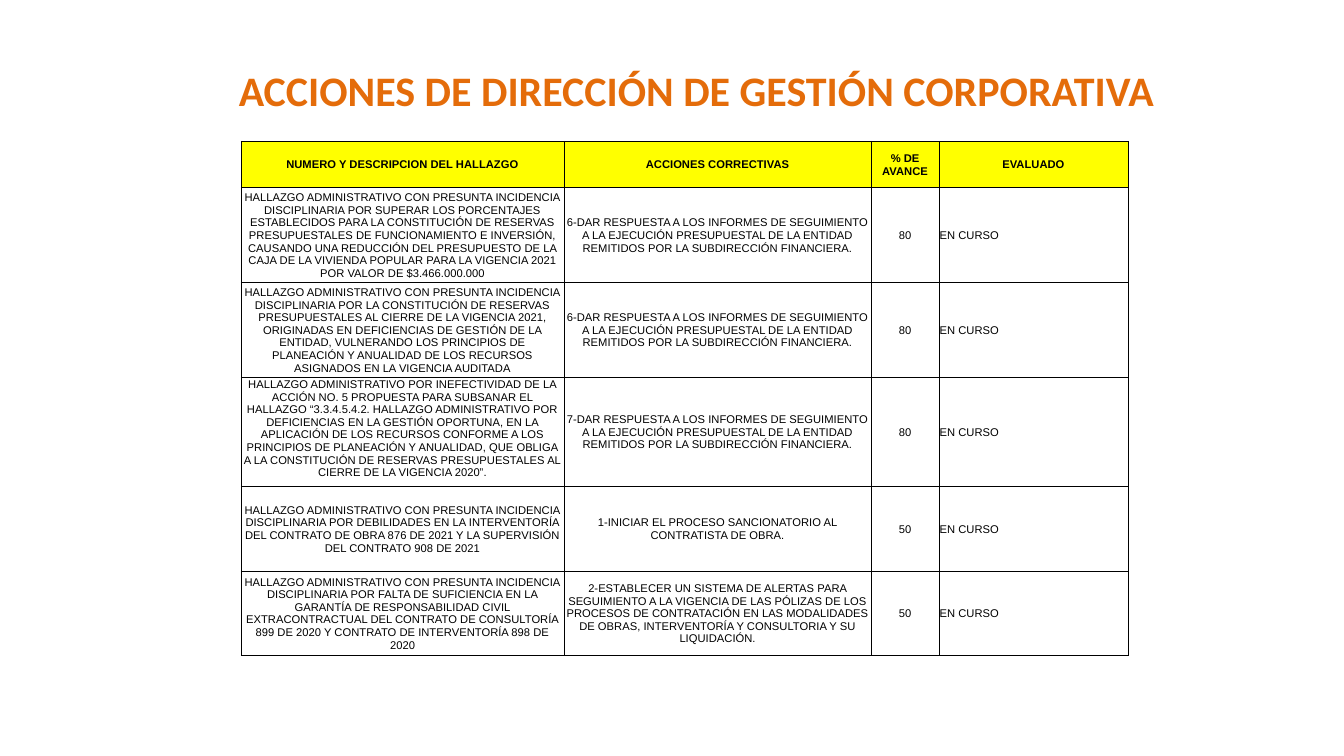
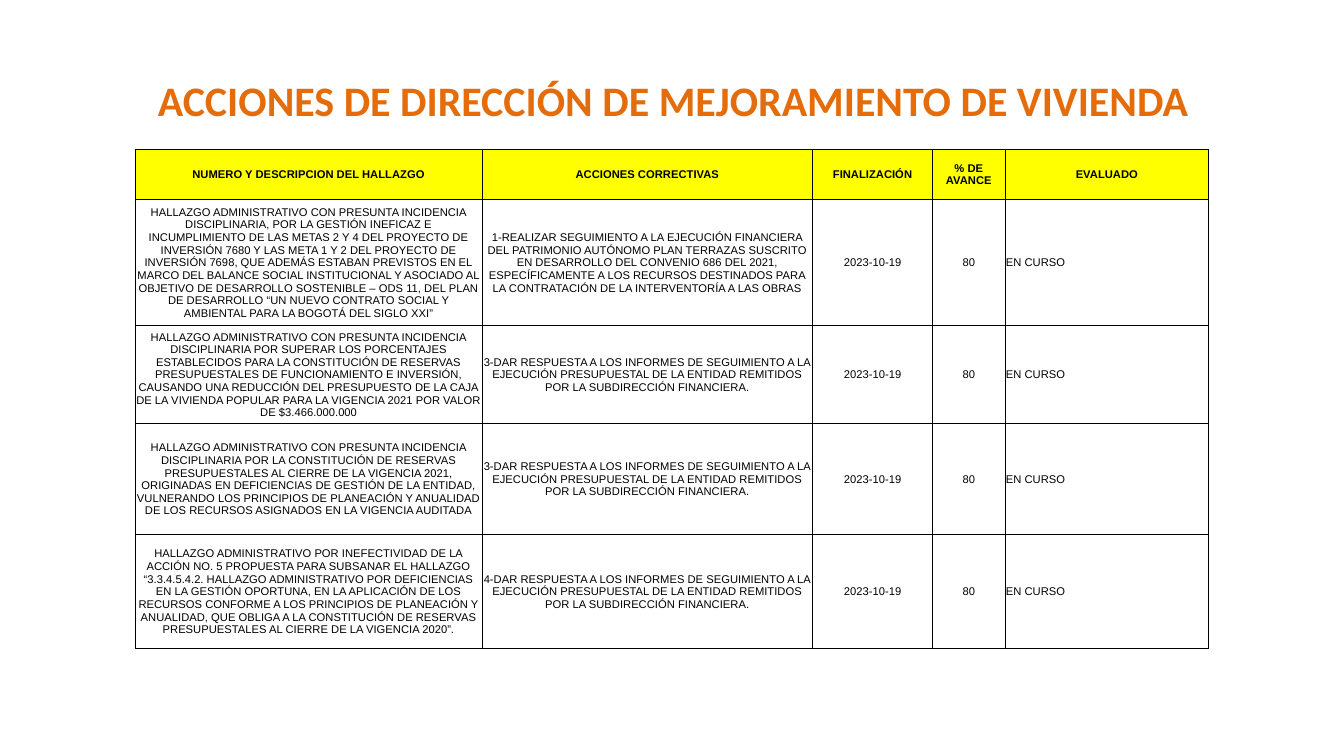
"""Build two slides that track corrective actions for audit findings."""
import pptx
import pptx.dml.color
import pptx.enum.text
import pptx.oxml
import pptx.oxml.ns
import pptx.util

Cm = pptx.util.Cm
Pt = pptx.util.Pt
RGBColor = pptx.dml.color.RGBColor
CENTER = pptx.enum.text.PP_ALIGN.CENTER
LEFT = pptx.enum.text.PP_ALIGN.LEFT
MIDDLE = pptx.enum.text.MSO_ANCHOR.MIDDLE
TOP = pptx.enum.text.MSO_ANCHOR.TOP

ORANGE = RGBColor(0xE4, 0x6C, 0x0A)
YELLOW = RGBColor(0xFF, 0xFF, 0x00)
BLACK = RGBColor(0x00, 0x00, 0x00)

FINDING = "NUMERO Y DESCRIPCION DEL HALLAZGO"
ACTIONS = "ACCIONES CORRECTIVAS"
PROGRESS = "% DE AVANCE"
STATUS = "EVALUADO"
IN_PROGRESS = "EN CURSO"
END_DATE = "2023-10-19"

PRESUMED = "HALLAZGO ADMINISTRATIVO CON PRESUNTA INCIDENCIA DISCIPLINARIA"
EXCESS_RESERVES = (
    f"{PRESUMED} POR SUPERAR LOS PORCENTAJES ESTABLECIDOS PARA LA CONSTITUCIÓN DE "
    "RESERVAS PRESUPUESTALES DE FUNCIONAMIENTO E INVERSIÓN, CAUSANDO UNA REDUCCIÓN DEL "
    "PRESUPUESTO DE LA CAJA DE LA VIVIENDA POPULAR PARA LA VIGENCIA 2021 POR VALOR DE "
    "$3.466.000.000")
YEAR_END_RESERVES = (
    f"{PRESUMED} POR LA CONSTITUCIÓN DE RESERVAS PRESUPUESTALES AL CIERRE DE LA VIGENCIA "
    "2021, ORIGINADAS EN DEFICIENCIAS DE GESTIÓN DE LA ENTIDAD, VULNERANDO LOS PRINCIPIOS "
    "DE PLANEACIÓN Y ANUALIDAD DE LOS RECURSOS ASIGNADOS EN LA VIGENCIA AUDITADA")
INEFFECTIVE_ACTION = (
    "HALLAZGO ADMINISTRATIVO POR INEFECTIVIDAD DE LA ACCIÓN NO. 5 PROPUESTA PARA SUBSANAR "
    "EL HALLAZGO “3.3.4.5.4.2. HALLAZGO ADMINISTRATIVO POR DEFICIENCIAS EN LA GESTIÓN "
    "OPORTUNA, EN LA APLICACIÓN DE LOS RECURSOS CONFORME A LOS PRINCIPIOS DE PLANEACIÓN Y "
    "ANUALIDAD, QUE OBLIGA A LA CONSTITUCIÓN DE RESERVAS PRESUPUESTALES AL CIERRE DE LA "
    "VIGENCIA 2020”.")
SUPERVISION = (
    f"{PRESUMED} POR DEBILIDADES EN LA INTERVENTORÍA DEL CONTRATO DE OBRA 876 DE 2021 Y LA "
    "SUPERVISIÓN DEL CONTRATO 908 DE 2021")
LIABILITY = (
    f"{PRESUMED} POR FALTA DE SUFICIENCIA EN LA GARANTÍA DE RESPONSABILIDAD CIVIL "
    "EXTRACONTRACTUAL DEL CONTRATO DE CONSULTORÍA 899 DE 2020 Y CONTRATO DE INTERVENTORÍA "
    "898 DE 2020")
MISSED_TARGETS = (
    f"{PRESUMED}, POR LA GESTIÓN INEFICAZ E INCUMPLIMIENTO DE LAS METAS 2 Y 4 DEL PROYECTO "
    "DE INVERSIÓN 7680 Y LAS META 1 Y 2 DEL PROYECTO DE INVERSIÓN 7698, QUE ADEMÁS ESTABAN "
    "PREVISTOS EN EL MARCO DEL BALANCE SOCIAL INSTITUCIONAL Y ASOCIADO AL OBJETIVO DE "
    "DESARROLLO SOSTENIBLE – ODS 11, DEL PLAN DE DESARROLLO “UN NUEVO CONTRATO SOCIAL Y "
    "AMBIENTAL PARA LA BOGOTÁ DEL SIGLO XXI”")

ANSWER_REPORTS = (
    "DAR RESPUESTA A LOS INFORMES DE SEGUIMIENTO A LA EJECUCIÓN PRESUPUESTAL DE LA ENTIDAD "
    "REMITIDOS POR LA SUBDIRECCIÓN FINANCIERA.")
START_SANCTION = "1-INICIAR EL PROCESO SANCIONATORIO AL CONTRATISTA DE OBRA."
ALERT_SYSTEM = (
    "2-ESTABLECER UN SISTEMA DE ALERTAS PARA SEGUIMIENTO A LA VIGENCIA DE LAS PÓLIZAS DE LOS "
    "PROCESOS DE CONTRATACIÓN EN LAS MODALIDADES DE OBRAS, INTERVENTORÍA Y CONSULTORIA Y SU "
    "LIQUIDACIÓN.")
TRACK_SPENDING = (
    "1-REALIZAR SEGUIMIENTO A LA EJECUCIÓN FINANCIERA DEL PATRIMONIO AUTÓNOMO PLAN TERRAZAS "
    "SUSCRITO EN DESARROLLO DEL CONVENIO 686 DEL 2021, ESPECÍFICAMENTE A LOS RECURSOS "
    "DESTINADOS PARA LA CONTRATACIÓN DE LA INTERVENTORÍA A LAS OBRAS")

SLIDES = [
    {
        "title": "ACCIONES DE DIRECCIÓN DE GESTIÓN CORPORATIVA",
        "title_box": (5.77, 1.5, 23.8, 1.55),
        "table_corner": (6.08, 3.56),
        "widths": (8.13, 7.75, 1.7, 4.77),
        "heights": (1.17, 2.39, 2.39, 2.75, 2.13, 2.13),
        "top_anchored": INEFFECTIVE_ACTION,
        "rows": [
            (FINDING, ACTIONS, PROGRESS, STATUS),
            (EXCESS_RESERVES, f"6-{ANSWER_REPORTS}", "80", IN_PROGRESS),
            (YEAR_END_RESERVES, f"6-{ANSWER_REPORTS}", "80", IN_PROGRESS),
            (INEFFECTIVE_ACTION, f"7-{ANSWER_REPORTS}", "80", IN_PROGRESS),
            (SUPERVISION, START_SANCTION, "50", IN_PROGRESS),
            (LIABILITY, ALERT_SYSTEM, "50", IN_PROGRESS),
        ],
    },
    {
        "title": "ACCIONES DE DIRECCIÓN DE MEJORAMIENTO DE VIVIENDA",
        "title_box": (3.73, 1.75, 26.72, 1.55),
        "table_corner": (3.41, 3.76),
        "widths": (8.74, 8.33, 3.02, 1.83, 5.13),
        "heights": (1.26, 3.19, 2.46, 2.8, 2.87),
        "top_anchored": None,
        "rows": [
            (FINDING, ACTIONS, "FINALIZACIÓN", PROGRESS, STATUS),
            (MISSED_TARGETS, TRACK_SPENDING, END_DATE, "80", IN_PROGRESS),
            (EXCESS_RESERVES, f"3-{ANSWER_REPORTS}", END_DATE, "80", IN_PROGRESS),
            (YEAR_END_RESERVES, f"3-{ANSWER_REPORTS}", END_DATE, "80", IN_PROGRESS),
            (INEFFECTIVE_ACTION, f"4-{ANSWER_REPORTS}", END_DATE, "80", IN_PROGRESS),
        ],
    },
]


def style_text(paragraph, name, size, color, bold):
    paragraph.font.name = name
    paragraph.font.size = Pt(size)
    paragraph.font.color.rgb = color
    paragraph.font.bold = bold


def add_borders(cell):
    properties = cell._tc.get_or_add_tcPr()
    for position, side in enumerate(("lnL", "lnR", "lnT", "lnB")):
        properties.insert(position, pptx.oxml.parse_xml(
            f'<a:{side} {pptx.oxml.ns.nsdecls("a")} w="{Pt(0.5)}"><a:solidFill>'
            f'<a:srgbClr val="{BLACK}"/></a:solidFill></a:{side}>'))


presentation = pptx.Presentation()
presentation.slide_width = Cm(33.87)
presentation.slide_height = Cm(19.05)

for content in SLIDES:
    slide = presentation.slides.add_slide(presentation.slide_layouts[6])

    title = slide.shapes.add_textbox(*map(Cm, content["title_box"]))
    title.text_frame.word_wrap = False
    title.text_frame.auto_size = pptx.enum.text.MSO_AUTO_SIZE.SHAPE_TO_FIT_TEXT
    paragraph = title.text_frame.paragraphs[0]
    paragraph.text = content["title"]
    style_text(paragraph, "Calibri", 30, ORANGE, True)

    rows, widths, heights = content["rows"], content["widths"], content["heights"]
    left, top = content["table_corner"]
    table = slide.shapes.add_table(
        len(rows), len(widths), Cm(left), Cm(top), Cm(sum(widths)), Cm(sum(heights))).table
    for column, width in zip(table.columns, widths):
        column.width = Cm(width)
    for row, height in zip(table.rows, heights):
        row.height = Cm(height)

    for row_index, texts in enumerate(rows):
        is_header = row_index == 0
        for column_index, text in enumerate(texts):
            cell = table.cell(row_index, column_index)
            cell.margin_left = cell.margin_right = cell.margin_top = Cm(0.02)
            cell.margin_bottom = 0
            cell.vertical_anchor = TOP if text == content["top_anchored"] else MIDDLE
            if is_header:
                cell.fill.solid()
                cell.fill.fore_color.rgb = YELLOW
            else:
                cell.fill.background()
            add_borders(cell)
            paragraph = cell.text_frame.paragraphs[0]
            paragraph.text = text
            paragraph.alignment = LEFT if text == IN_PROGRESS else CENTER
            style_text(paragraph, "Arial", 8, BLACK, is_header)

presentation.save("out.pptx")
